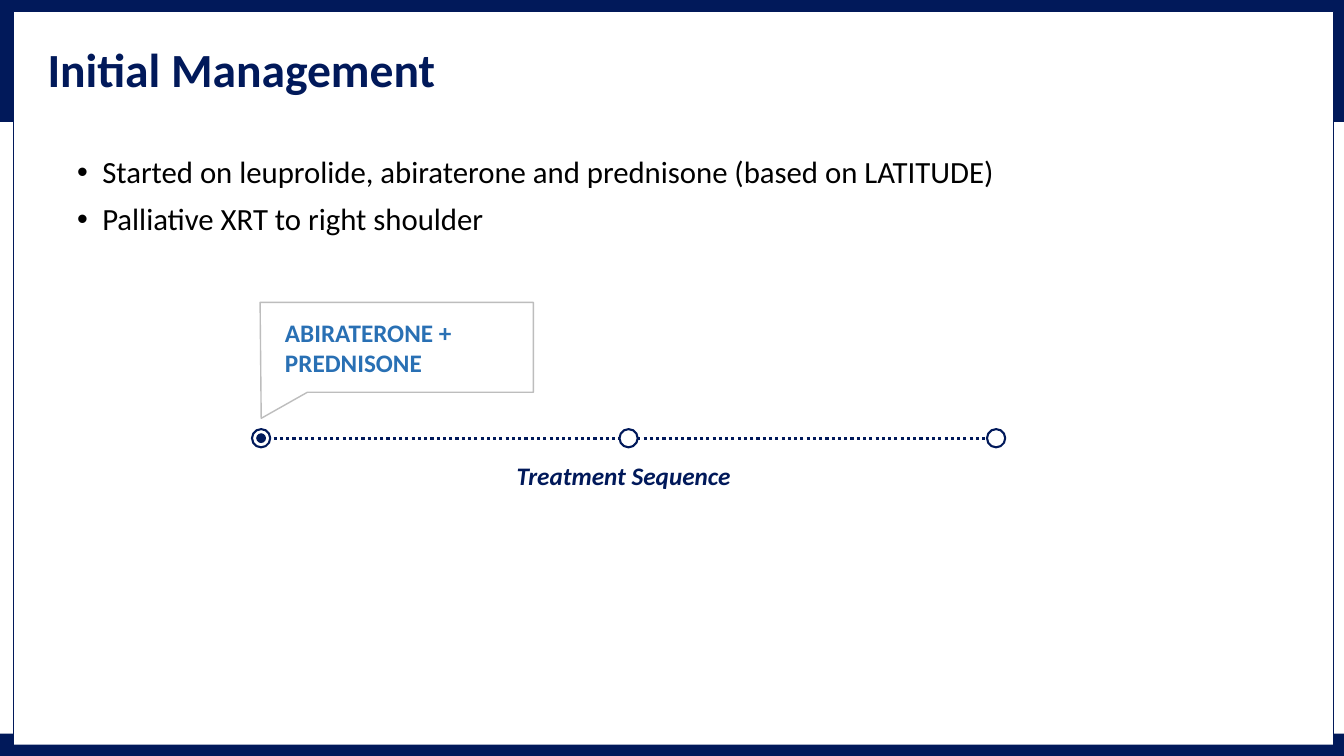
from lxml import etree
from pptx import Presentation
from pptx.dml.color import RGBColor
from pptx.enum.dml import MSO_LINE
from pptx.enum.shapes import MSO_CONNECTOR, MSO_SHAPE
from pptx.enum.text import MSO_ANCHOR, PP_ALIGN
from pptx.oxml.ns import qn
from pptx.util import Pt

TITLE = "Initial Management"
BULLETS = [
    "Started on leuprolide, abiraterone and prednisone (based on LATITUDE)",
    "Palliative XRT to right shoulder",
]
THERAPY = "ABIRATERONE + PREDNISONE"
CAPTION = "Treatment Sequence"
STAGES_REACHED = [True, False, False]

FONT = "Calibri"
NAVY, BLUE, GREY, WHITE, BLACK = "01195A", "2970B4", "BDBDBD", "FFFFFF", "000000"
WIDTH, HEIGHT = 960, 540
BANDS = [(0, 87), (524, 16)]  # top, height
CALLOUT = [(185.8, 216), (381, 216), (381, 280.2), (219.6, 280.2), (186.6, 298.8)]
FIRST_STAGE, STAGE_GAP, AXIS_Y = 186.5, 262.5, 313
RING, DOT = 13, 7


def color(hex_string):
    return RGBColor.from_string(hex_string)


def paint(shape, fill, line=None, weight=1):
    shape.shadow.inherit = False
    shape.fill.solid()
    shape.fill.fore_color.rgb = color(fill)
    if line:
        shape.line.color.rgb = color(line)
        shape.line.width = Pt(weight)
    else:
        shape.line.fill.background()


def add_preset(slide, preset, left, top, width, height, *style):
    shape = slide.shapes.add_shape(preset, Pt(left), Pt(top), Pt(width), Pt(height))
    paint(shape, *style)


def add_circle(slide, center, diameter, *style):
    add_preset(slide, MSO_SHAPE.OVAL, center - diameter / 2, AXIS_Y - diameter / 2,
               diameter, diameter, *style)


def add_text(slide, box, lines, size, fill, bold=False, italic=False):
    frame = slide.shapes.add_textbox(*map(Pt, box)).text_frame
    frame.word_wrap = True
    frame.text = "\n".join(lines)
    for paragraph in frame.paragraphs:
        font = paragraph.runs[0].font
        font.name, font.size = FONT, Pt(size)
        font.bold, font.italic = bold, italic
        font.color.rgb = color(fill)
    return frame


def add_bullet(paragraph):
    properties = paragraph._p.get_or_add_pPr()
    properties.set("marL", str(Pt(18)))
    properties.set("indent", str(Pt(-18)))
    etree.SubElement(properties, qn("a:buFont")).set("typeface", "Arial")
    etree.SubElement(properties, qn("a:buChar")).set("char", "•")


def add_frame(slide):
    for top, height in BANDS:
        add_preset(slide, MSO_SHAPE.RECTANGLE, 0, top, WIDTH, height, NAVY)
    add_preset(slide, MSO_SHAPE.RECTANGLE, 9.5, 8, 943, 524, WHITE, NAVY, 0.3)


def add_heading(slide):
    title = add_text(slide, (34, 10, 904, 85), [TITLE], 34, NAVY, bold=True)
    title.margin_left = 0
    title.vertical_anchor = MSO_ANCHOR.MIDDLE
    title.paragraphs[0].line_spacing = Pt(34)

    body = add_text(slide, (48, 108.7, 869, 81), BULLETS, 22, BLACK)
    for paragraph in body.paragraphs:
        paragraph.line_spacing = 0.9
        paragraph.space_before = Pt(10)
        add_bullet(paragraph)


def add_timeline(slide):
    start, *corners = [(Pt(x), Pt(y)) for x, y in CALLOUT]
    builder = slide.shapes.build_freeform(*start)
    builder.add_line_segments(corners, close=True)
    paint(builder.convert_to_shape(), WHITE, GREY)
    add_text(slide, (196.5, 223.2, 208, 73), [THERAPY], 18, BLUE, bold=True)

    centers = [FIRST_STAGE + i * STAGE_GAP for i in range(len(STAGES_REACHED))]
    axis = slide.shapes.add_connector(MSO_CONNECTOR.STRAIGHT, Pt(centers[0]), Pt(AXIS_Y),
                                      Pt(centers[-1]), Pt(AXIS_Y))
    axis.line.color.rgb = color(NAVY)
    axis.line.width = Pt(2.25)
    axis.line.dash_style = MSO_LINE.ROUND_DOT
    etree.SubElement(axis._element.spPr, qn("a:effectLst"))

    for center, reached in zip(centers, STAGES_REACHED):
        add_circle(slide, center, RING, WHITE, NAVY, 1.5)
        if reached:
            add_circle(slide, center, DOT, NAVY)

    caption = add_text(slide, (172, 325.5, 547, 29), [CAPTION], 18, NAVY, True, True)
    caption.paragraphs[0].alignment = PP_ALIGN.CENTER


def main():
    deck = Presentation()
    deck.slide_width, deck.slide_height = Pt(WIDTH), Pt(HEIGHT)
    slide = deck.slides.add_slide(deck.slide_layouts[6])
    add_frame(slide)
    add_heading(slide)
    add_timeline(slide)
    deck.save("out.pptx")


if __name__ == "__main__":
    main()
